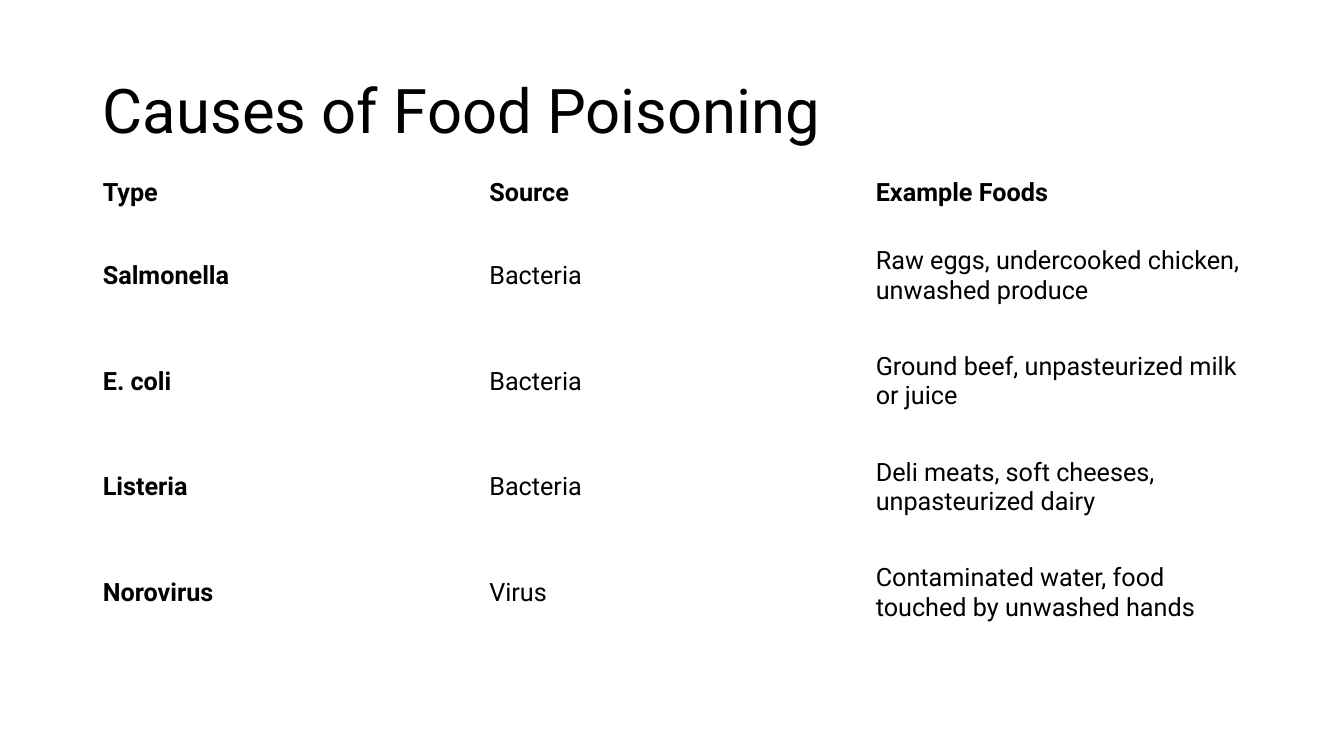
from pptx import Presentation
from pptx.dml.color import RGBColor
from pptx.enum.text import MSO_ANCHOR as Anchor, PP_ALIGN as Align
from pptx.util import Inches, Pt

BLACK = RGBColor(0x00, 0x00, 0x00)
FONT = "Roboto"
HEADER_HEIGHT = 0.59
CAUSES = [
    ("Type", "Source", "Example Foods"),
    ("Salmonella", "Bacteria", "Raw eggs, undercooked chicken, unwashed produce"),
    ("E. coli", "Bacteria", "Ground beef, unpasteurized milk or juice"),
    ("Listeria", "Bacteria", "Deli meats, soft cheeses, unpasteurized dairy"),
    ("Norovirus", "Virus", "Contaminated water, food touched by unwashed hands"),
]


def write_text(frame, text, size=18, bold=False, spacing=1.0):
    para = frame.paragraphs[0]
    para.alignment = Align.LEFT
    para.line_spacing = spacing
    span = para.add_run()
    span.text = text
    span.font.name = FONT
    span.font.size = Pt(size)
    span.font.bold = bold
    span.font.color.rgb = BLACK


def place_title(page, text, left, top, width, height):
    title = page.shapes.title
    title.left, title.top = Inches(left), Inches(top)
    title.width, title.height = Inches(width), Inches(height)
    title.text_frame.word_wrap = True
    title.text_frame.vertical_anchor = Anchor.MIDDLE
    write_text(title.text_frame, text, size=44, spacing=0.9)


def place_table(page, rows, left, top, width, height):
    row_count, column_count = len(rows), len(rows[0])
    table = page.shapes.add_table(
        row_count, column_count,
        Inches(left), Inches(top), Inches(width), Inches(height),
    ).table
    table.horz_banding = False
    table.first_col = True
    for column in table.columns:
        column.width = Inches(width / column_count)
    body_height = (height - HEADER_HEIGHT) / (row_count - 1)
    for row_index, texts in enumerate(rows):
        table.rows[row_index].height = Inches(body_height if row_index else HEADER_HEIGHT)
        for column_index, text in enumerate(texts):
            cell = table.cell(row_index, column_index)
            cell.fill.background()
            cell.vertical_anchor = Anchor.MIDDLE
            write_text(cell.text_frame, text, bold=row_index == 0 or column_index == 0)


def main():
    deck = Presentation()
    deck.slide_width, deck.slide_height = Inches(13.33), Inches(7.5)
    page = deck.slides.add_slide(deck.slide_layouts[5])
    place_title(page, "Causes of Food Poisoning", 0.92, 0.4, 11.5, 1.45)
    place_table(page, CAUSES, 0.92, 1.62, 11.5, 4.79)
    deck.save("out.pptx")


if __name__ == "__main__":
    main()
